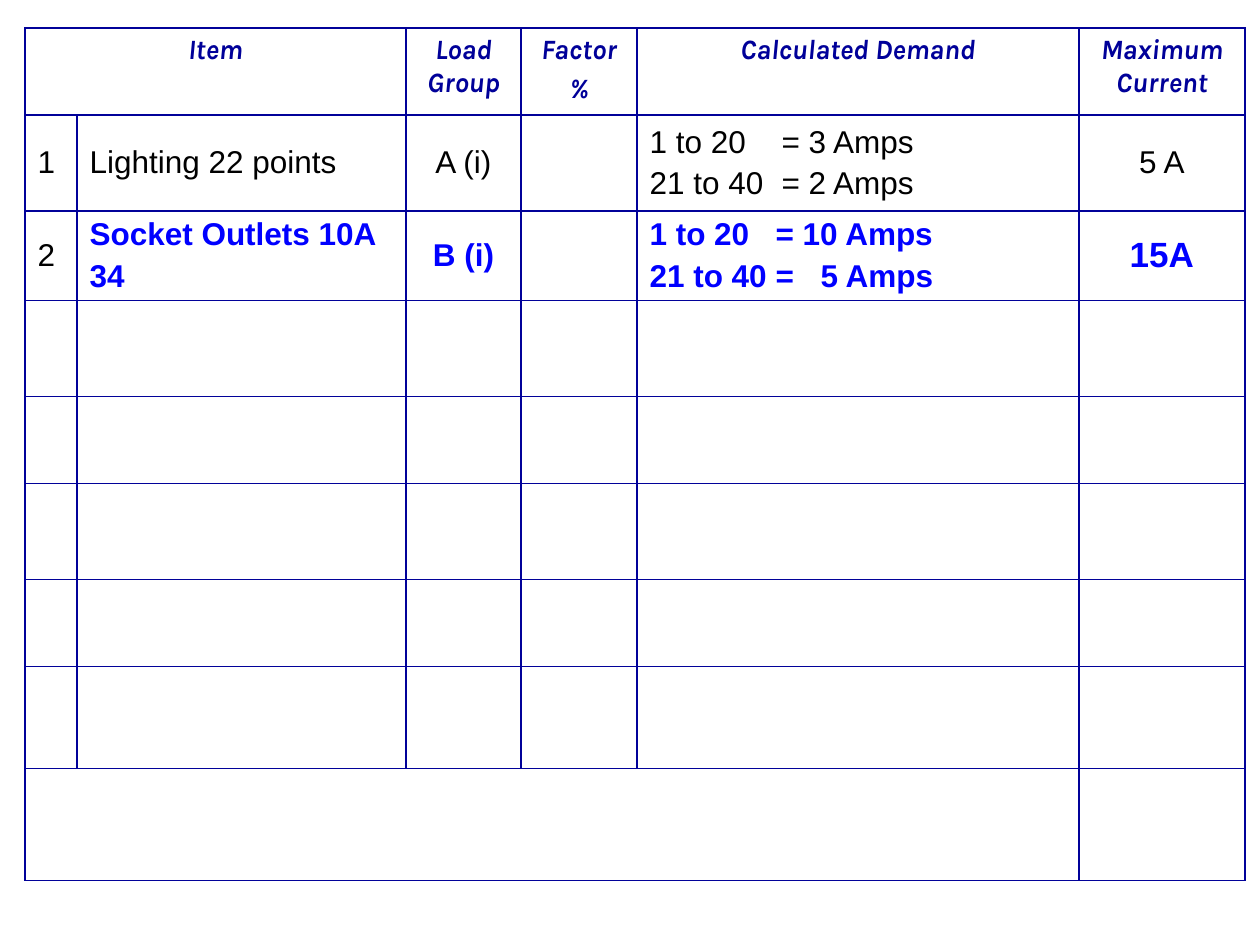
from dataclasses import dataclass

from lxml import etree
from pptx import Presentation
from pptx.dml.color import RGBColor
from pptx.enum.text import MSO_ANCHOR, PP_ALIGN
from pptx.oxml.ns import qn
from pptx.util import Pt

PX = 914400 // 126
LEFT, CENTER = PP_ALIGN.LEFT, PP_ALIGN.CENTER
TOP, MIDDLE = MSO_ANCHOR.TOP, MSO_ANCHOR.MIDDLE

TABLE_LEFT, TABLE_TOP = 25, 28
COLUMN_WIDTHS = [52, 329, 115, 116, 442, 166]
ROW_HEIGHTS = [87, 96, 87, 96, 87, 96, 87, 102, 112]
BORDER_COLOR = "010199"
BORDER_WIDTH = Pt(1)


@dataclass(frozen=True)
class Style:
    font: str
    size: int
    color: str
    bold: bool = False
    italic: bool = False


@dataclass(frozen=True)
class Entry:
    row: int
    column: int
    lines: tuple[str, ...]
    style: Style
    align: PP_ALIGN = CENTER
    anchor: MSO_ANCHOR = MIDDLE
    tabs: tuple[int, ...] = ()


HEADER = Style("Karla", 16, "000099", bold=True, italic=True)
PLAIN = Style("Arial", 18, "000000")
STRONG = Style("Arial", 18, "0000FF", bold=True)
TOTAL = Style("Arial", 20, "0000FF", bold=True)

HEADINGS = {
    0: ("Item",),
    2: ("Load Group",),
    3: ("Factor", "%"),
    4: ("Calculated Demand",),
    5: ("Maximum Current",),
}
ENTRIES = [
    *(Entry(0, column, lines, HEADER, anchor=TOP) for column, lines in HEADINGS.items()),
    Entry(1, 0, ("1",), PLAIN, LEFT),
    Entry(1, 1, ("Lighting 22 points",), PLAIN, LEFT),
    Entry(1, 2, ("A (i)",), PLAIN),
    Entry(1, 4, ("1 to 20\t= 3 Amps", "21 to 40\t= 2 Amps"), PLAIN, LEFT, tabs=(132,)),
    Entry(1, 5, ("5 A",), PLAIN),
    Entry(2, 0, ("2",), PLAIN, LEFT),
    Entry(2, 1, ("Socket Outlets 10A", "34"), STRONG, LEFT),
    Entry(2, 2, ("B (i)",), STRONG),
    Entry(2, 4, ("1 to 20\t= 10 Amps", "21 to 40\t=\t5 Amps"), STRONG, LEFT, tabs=(126, 171)),
    Entry(2, 5, ("15A",), TOTAL),
]


def px(length: int) -> int:
    return length * PX


def rgb(color: str) -> RGBColor:
    return RGBColor.from_string(color)


def format_cell(cell) -> None:
    """Clear the fill and rule all four sides."""
    properties = cell._tc.get_or_add_tcPr()
    for side in ("lnL", "lnR", "lnT", "lnB"):
        line = etree.SubElement(properties, qn(f"a:{side}"), w=str(BORDER_WIDTH))
        fill = etree.SubElement(line, qn("a:solidFill"))
        etree.SubElement(fill, qn("a:srgbClr"), val=BORDER_COLOR)
    cell.fill.background()


def set_tabs(para, tabs: tuple[int, ...]) -> None:
    tab_list = etree.SubElement(para._p.get_or_add_pPr(), qn("a:tabLst"))
    for position in tabs:
        etree.SubElement(tab_list, qn("a:tab"), pos=str(px(position)), algn="l")


def write_entry(table, entry: Entry) -> None:
    cell = table.cell(entry.row, entry.column)
    cell.vertical_anchor = entry.anchor
    frame = cell.text_frame
    style = entry.style
    for index, line in enumerate(entry.lines):
        para = frame.add_paragraph() if index else frame.paragraphs[0]
        para.alignment = entry.align
        para.space_before = Pt(style.size * 0.2)
        if entry.tabs:
            set_tabs(para, entry.tabs)
        span = para.add_run()
        span.text = line
        span.font.name = style.font
        span.font.size = Pt(style.size)
        span.font.bold = style.bold
        span.font.italic = style.italic
        span.font.color.rgb = rgb(style.color)


def add_demand_table(page) -> None:
    table = page.shapes.add_table(
        len(ROW_HEIGHTS), len(COLUMN_WIDTHS), px(TABLE_LEFT), px(TABLE_TOP),
        px(sum(COLUMN_WIDTHS)), px(sum(ROW_HEIGHTS)),
    ).table
    table.first_row = False
    table.horz_banding = False
    for column, width in zip(table.columns, COLUMN_WIDTHS):
        column.width = px(width)
    for row, height in zip(table.rows, ROW_HEIGHTS):
        row.height = px(height)
    for cell in table.iter_cells():
        format_cell(cell)
    last_row = len(ROW_HEIGHTS) - 1
    table.cell(0, 0).merge(table.cell(0, 1))
    table.cell(last_row, 0).merge(table.cell(last_row, 4))
    for entry in ENTRIES:
        write_entry(table, entry)


def main() -> None:
    deck = Presentation()
    deck.slide_width, deck.slide_height = px(1260), px(945)
    page = deck.slides.add_slide(deck.slide_layouts[6])
    add_demand_table(page)
    deck.save("out.pptx")


if __name__ == "__main__":
    main()
